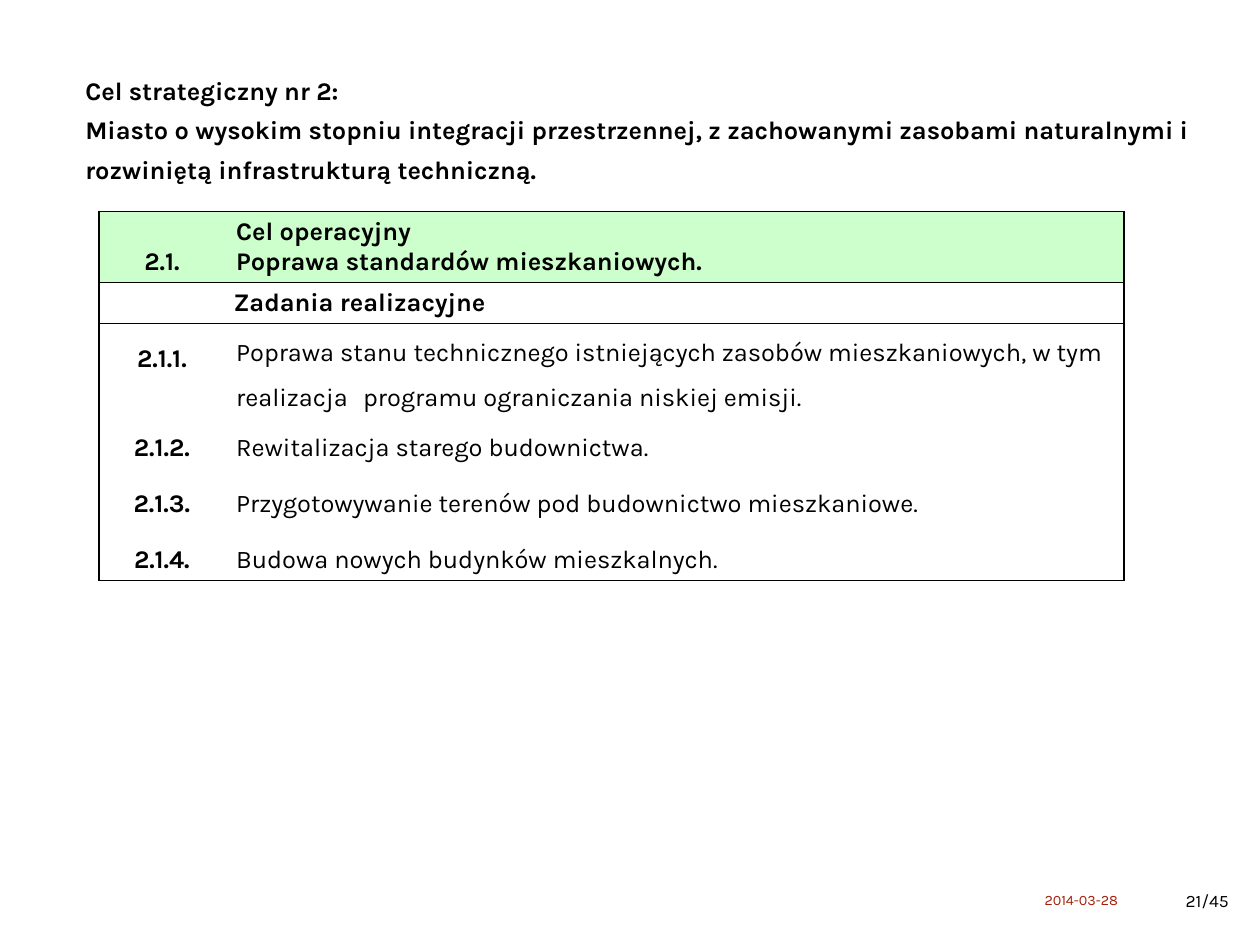
from lxml.etree import SubElement
from pptx import Presentation
from pptx.dml.color import RGBColor
from pptx.enum.text import MSO_ANCHOR, MSO_AUTO_SIZE, PP_ALIGN
from pptx.oxml.ns import qn
from pptx.util import Pt

BLACK = RGBColor(0x00, 0x00, 0x00)
GREEN = RGBColor(0xCC, 0xFF, 0xCC)
RED = RGBColor(0xA3, 0x1F, 0x09)
FONT = "Karla"

TITLE = ("Cel strategiczny nr 2: \vMiasto o wysokim stopniu integracji przestrzennej, "
         "z zachowanymi zasobami naturalnymi i rozwiniętą infrastrukturą techniczną.")
GOAL = "Cel operacyjny\vPoprawa standardów mieszkaniowych."
TASKS = [
    "Poprawa stanu technicznego istniejących zasobów mieszkaniowych, "
    "w tym realizacja \tprogramu ograniczania niskiej emisji.",
    "Rewitalizacja starego budownictwa.",
    "Przygotowywanie terenów pod budownictwo mieszkaniowe.",
    "Budowa nowych budynków mieszkalnych.",
]
COLUMN_WIDTHS = [79.2, 566.6]
ROW_HEIGHTS = [44, 25, 56, 35, 35, 35]
TAB_STOP = 80


def write(frame, text, size=16, color=BLACK, bold=False, align=PP_ALIGN.LEFT, spacing=1.0):
    para = frame.paragraphs[0]
    para.text = text
    para.alignment = align
    para.line_spacing = spacing
    if "\t" in text:
        tabs = SubElement(para._p.get_or_add_pPr(), qn("a:tabLst"))
        SubElement(tabs, qn("a:tab"), pos=str(Pt(TAB_STOP)), algn="l")
    para.font.name = FONT
    para.font.size = Pt(size)
    para.font.bold = bold
    para.font.color.rgb = color


def set_frame(frame, anchor, side=0, top=0):
    frame.word_wrap = True
    frame.auto_size = MSO_AUTO_SIZE.NONE
    frame.vertical_anchor = anchor
    frame.margin_left = frame.margin_right = Pt(side)
    frame.margin_top = frame.margin_bottom = Pt(top)


def add_label(page, left, top, width, height, text, anchor, side=0, inset=0, **style):
    box = page.shapes.add_textbox(Pt(left), Pt(top), Pt(width), Pt(height))
    set_frame(box.text_frame, anchor, side, inset)
    write(box.text_frame, text, **style)


def set_borders(cell, edges):
    """Draw the named edges in black and hide the others."""
    properties = cell._tc.get_or_add_tcPr()
    for edge in "LRTB":
        line = SubElement(properties, qn(f"a:ln{edge}"), w=str(Pt(1)))
        if edge in edges:
            fill = SubElement(line, qn("a:solidFill"))
            SubElement(fill, qn("a:srgbClr"), val=str(BLACK))
        else:
            SubElement(line, qn("a:noFill"))


def add_title(page):
    title = page.shapes.title
    title.left, title.top, title.width, title.height = Pt(53.75), Pt(45), Pt(700.6), Pt(71.3)
    set_frame(title.text_frame, MSO_ANCHOR.BOTTOM)
    write(title.text_frame, TITLE, bold=True, spacing=1.3)


def add_goal_table(page):
    table = page.shapes.add_table(
        len(ROW_HEIGHTS), len(COLUMN_WIDTHS), Pt(62.4), Pt(133.2),
        Pt(sum(COLUMN_WIDTHS)), Pt(sum(ROW_HEIGHTS))).table
    table.first_row = table.horz_banding = False
    for column, width in zip(table.columns, COLUMN_WIDTHS):
        column.width = Pt(width)
    for row, height in zip(table.rows, ROW_HEIGHTS):
        row.height = Pt(height)
    table.cell(1, 0).merge(table.cell(1, 1))

    # Outer frame, with rules around the two heading rows
    last = len(ROW_HEIGHTS) - 1
    for index, row in enumerate(table.rows):
        rules = ("T" if index <= 2 else "") + ("B" if index in (0, 1, last) else "")
        for cell, sides in zip(row.cells, ("LR" if index == 1 else "L", "R")):
            set_borders(cell, sides + rules)
            if index == 0:
                cell.fill.solid()
                cell.fill.fore_color.rgb = GREEN
            else:
                cell.fill.background()

    # Heading rows
    number, goal, tasks = table.cell(0, 0), table.cell(0, 1), table.cell(1, 0)
    number.vertical_anchor = goal.vertical_anchor = MSO_ANCHOR.BOTTOM
    write(number.text_frame, "2.1.", bold=True, align=PP_ALIGN.CENTER)
    write(goal.text_frame, GOAL, bold=True)
    tasks.margin_left = Pt(84.8)
    write(tasks.text_frame, "Zadania realizacyjne", bold=True)

    # Task rows
    for index, task in enumerate(TASKS, start=1):
        number, text = table.cell(index + 1, 0), table.cell(index + 1, 1)
        write(number.text_frame, f"2.1.{index}.", bold=True, align=PP_ALIGN.CENTER, spacing=1.5)
        text.vertical_anchor = MSO_ANCHOR.MIDDLE
        text.margin_top = text.margin_bottom = Pt(0)
        write(text.text_frame, task, spacing=1.5)


def main():
    deck = Presentation()
    deck.slide_width, deck.slide_height = Pt(793.75), Pt(595.25)
    page = deck.slides.add_slide(deck.slide_layouts[5])
    add_title(page)
    add_goal_table(page)
    # Footer
    add_label(page, 658, 557.3, 68.4, 18.7, "2014-03-28", MSO_ANCHOR.MIDDLE, size=9, color=RED)
    add_label(page, 733, 556.2, 49, 28.8, "21/45", MSO_ANCHOR.TOP, side=7.9, inset=4.3,
              size=11, align=PP_ALIGN.RIGHT)
    deck.save("out.pptx")


if __name__ == "__main__":
    main()
